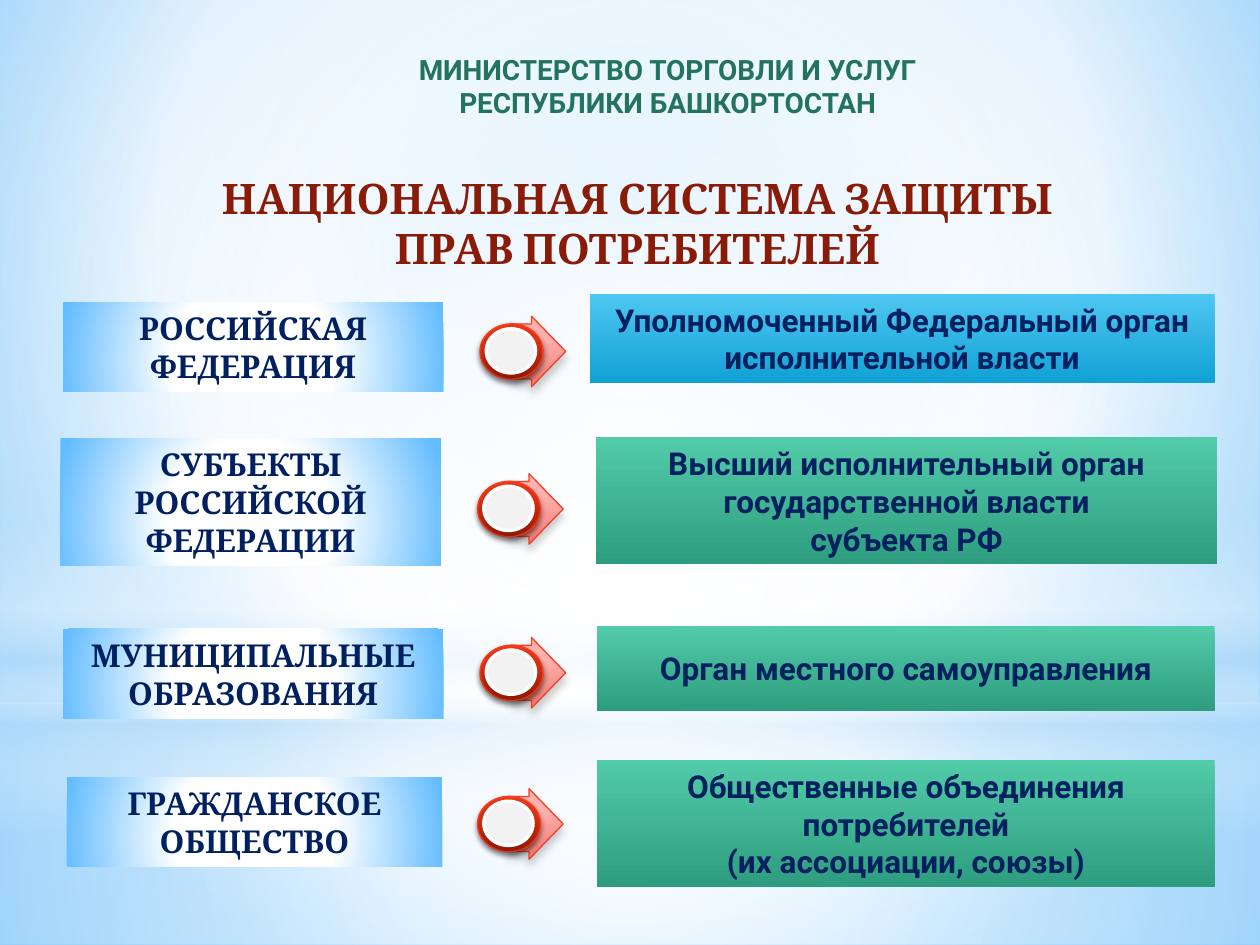
from pptx import Presentation
from pptx.dml.color import RGBColor
from pptx.enum.shapes import MSO_SHAPE
from pptx.enum.text import MSO_ANCHOR, PP_ALIGN
from pptx.oxml import parse_xml
from pptx.oxml.ns import qn
from pptx.util import Inches, Pt

NS = 'xmlns:a="http://schemas.openxmlformats.org/drawingml/2006/main"'


def paint(item, root, stops, rect=None):
    item.fill.solid()
    marks = "".join(
        f'<a:gs pos="{pos * 1000}"><a:srgbClr val="{tone}">'
        f'<a:alpha val="{alpha * 1000}"/></a:srgbClr></a:gs>'
        for pos, tone, alpha in stops
    )
    way = '<a:lin ang="5400000" scaled="0"/>'
    if rect:
        sides = " ".join(f'{side}="{part * 1000}"' for side, part in zip("ltrb", rect))
        way = f'<a:path path="circle"><a:fillToRect {sides}/></a:path>'
    old = root.find(qn("a:solidFill"))
    old.getparent().replace(
        old,
        parse_xml(f'<a:gradFill {NS} rotWithShape="1"><a:gsLst>{marks}</a:gsLst>{way}</a:gradFill>'),
    )


def write(shape, lines, face, size, tone):
    frame = shape.text_frame
    frame.word_wrap = True
    frame.vertical_anchor = MSO_ANCHOR.MIDDLE
    frame.text = "\n".join(lines)
    for para in frame.paragraphs:
        para.alignment = PP_ALIGN.CENTER
        para.font.name = face
        para.font.size = Pt(size)
        para.font.bold = True
        para.font.color.rgb = RGBColor.from_string(tone)


deck = Presentation()
deck.slide_width = Inches(10)
deck.slide_height = Inches(7.5)
slide = deck.slides.add_slide(deck.slide_layouts[6])

back = slide.background
back.fill.solid()
paint(
    back,
    slide.element.find(".//" + qn("p:bgPr")),
    [(0, "9ED5FF", 100), (60, "FFFFFF", 100), (100, "5BB9FF", 100)],
    (20, 10, 20, 60),
)

mid = (50, 50, 50, 50)
glows = [
    (MSO_SHAPE.RECTANGLE, 0, 5.58, 1.92, mid,
     [(0, "FFFFFF", 91), (37, "FFFFFF", 76), (100, "B4DCFA", 79)]),
    (MSO_SHAPE.RECTANGLE, 0, 0, 5.58, mid,
     [(0, "FFFFFF", 89), (48, "FFFFFF", 62), (100, "B4DCFA", 79)]),
    (MSO_SHAPE.RECTANGLE, 0, 4.12, 2.5, None,
     [(0, "FFFFFF", 0), (29, "FFFFFF", 30), (45, "B4DCFA", 40),
      (55, "FFFFFF", 26), (65, "B4DCFA", 60), (100, "FFFFFF", 0)]),
    (MSO_SHAPE.OVAL, 0, 1.75, 5.58, mid,
     [(0, "FFFFFF", 100), (56, "FFFFFF", 0)]),
]
for kind, left, top, high, rect, stops in glows:
    glow = slide.shapes.add_shape(kind, Inches(left), Inches(top), Inches(10), Inches(high))
    glow.shadow.inherit = False
    glow.line.fill.background()
    paint(glow, glow.element.spPr, stops, rect)

pale = [(0, "FFFFFF", 100), (42, "FFFFFF", 100), (100, "63BCFF", 100)]
blue = [(0, "4EC7F2", 100), (100, "11A1D4", 100)]
green = [(0, "52CBA9", 100), (100, "2E9D7F", 100)]
side = (24, 44, 24, 12)
boxes = [
    (0.5, 2.4, 3.02, 0.71, pale, side, "Cambria", ["РОССИЙСКАЯ ФЕДЕРАЦИЯ"]),
    (0.48, 3.48, 3.02, 1.01, pale, side, "Cambria", ["СУБЪЕКТЫ РОССИЙСКОЙ ФЕДЕРАЦИИ"]),
    (0.5, 4.99, 3.02, 0.71, pale, side, "Cambria", ["МУНИЦИПАЛЬНЫЕ ОБРАЗОВАНИЯ"]),
    (0.53, 6.17, 2.98, 0.71, pale, side, "Cambria", ["ГРАЖДАНСКОЕ ОБЩЕСТВО"]),
    (4.68, 2.33, 4.96, 0.71, blue, None, "Roboto",
     ["Уполномоченный Федеральный орган исполнительной власти"]),
    (4.73, 3.47, 4.93, 1.01, green, None, "Roboto",
     ["Высший исполнительный орган государственной власти", "субъекта РФ"]),
    (4.74, 4.97, 4.9, 0.67, green, None, "Roboto", ["Орган местного самоуправления"]),
    (4.74, 6.03, 4.9, 1.01, green, None, "Roboto",
     ["Общественные объединения потребителей", "(их ассоциации, союзы)"]),
]
for left, top, wide, high, stops, rect, face, lines in boxes:
    box = slide.shapes.add_shape(
        MSO_SHAPE.RECTANGLE, Inches(left), Inches(top), Inches(wide), Inches(high)
    )
    box.shadow.inherit = False
    box.line.fill.background()
    paint(box, box.element.spPr, stops, rect)
    write(box, lines, face, 18, "002060")

heads = [
    (2.8, 0.36, 5, 0.64, "Roboto", 16, "23735D",
     ["МИНИСТЕРСТВО ТОРГОВЛИ И УСЛУГ", "РЕСПУБЛИКИ БАШКОРТОСТАН"]),
    (0.48, 1.31, 9.16, 0.91, "Cambria", 24, "891B09",
     ["НАЦИОНАЛЬНАЯ СИСТЕМА ЗАЩИТЫ", "ПРАВ ПОТРЕБИТЕЛЕЙ"]),
]
for left, top, wide, high, face, size, tone, lines in heads:
    head = slide.shapes.add_textbox(Inches(left), Inches(top), Inches(wide), Inches(high))
    write(head, lines, face, size, tone)

pink = [(28, "FDB2AF", 100), (100, "F07873", 100)]
red = [(0, "F03617", 100), (100, "B52007", 100)]
parts = [
    (MSO_SHAPE.RIGHT_ARROW, 0.25, 0, 0.43, 0.56, pink, "F14124", 0.75, (20, 5, 4)),
    (MSO_SHAPE.FLOWCHART_CONNECTOR, 0, 0.06, 0.5, 0.44, red, "F14124", 0.75, (45, 3.1, 1.8)),
    (MSO_SHAPE.FLOWCHART_CONNECTOR, 0.05, 0.1, 0.39, 0.35, None, "FFFFFF", 2, (20, 5, 4)),
]
for left, top in [(3.81, 2.51), (3.79, 3.76), (3.81, 5.06), (3.79, 6.26)]:
    group = slide.shapes.add_group_shape()
    for kind, across, down, wide, high, stops, edge, width, shade in parts:
        part = group.shapes.add_shape(
            kind, Inches(left + across), Inches(top + down), Inches(wide), Inches(high)
        )
        if kind == MSO_SHAPE.RIGHT_ARROW:
            part.adjustments[0] = 0.78
            part.adjustments[1] = 0.63
        if stops:
            paint(part, part.element.spPr, stops)
        else:
            part.fill.solid()
            part.fill.fore_color.rgb = RGBColor.from_string("F2F2F2")
        part.line.color.rgb = RGBColor.from_string(edge)
        part.line.width = Pt(width)
        part.shadow.inherit = False
        alpha, blur, dist = shade
        part.element.spPr.find(qn("a:effectLst")).append(parse_xml(
            f'<a:outerShdw {NS} blurRad="{Pt(blur)}" dist="{Pt(dist)}" dir="5400000" rotWithShape="0">'
            f'<a:srgbClr val="000000"><a:alpha val="{alpha * 1000}"/></a:srgbClr></a:outerShdw>'
        ))

deck.save("out.pptx")
